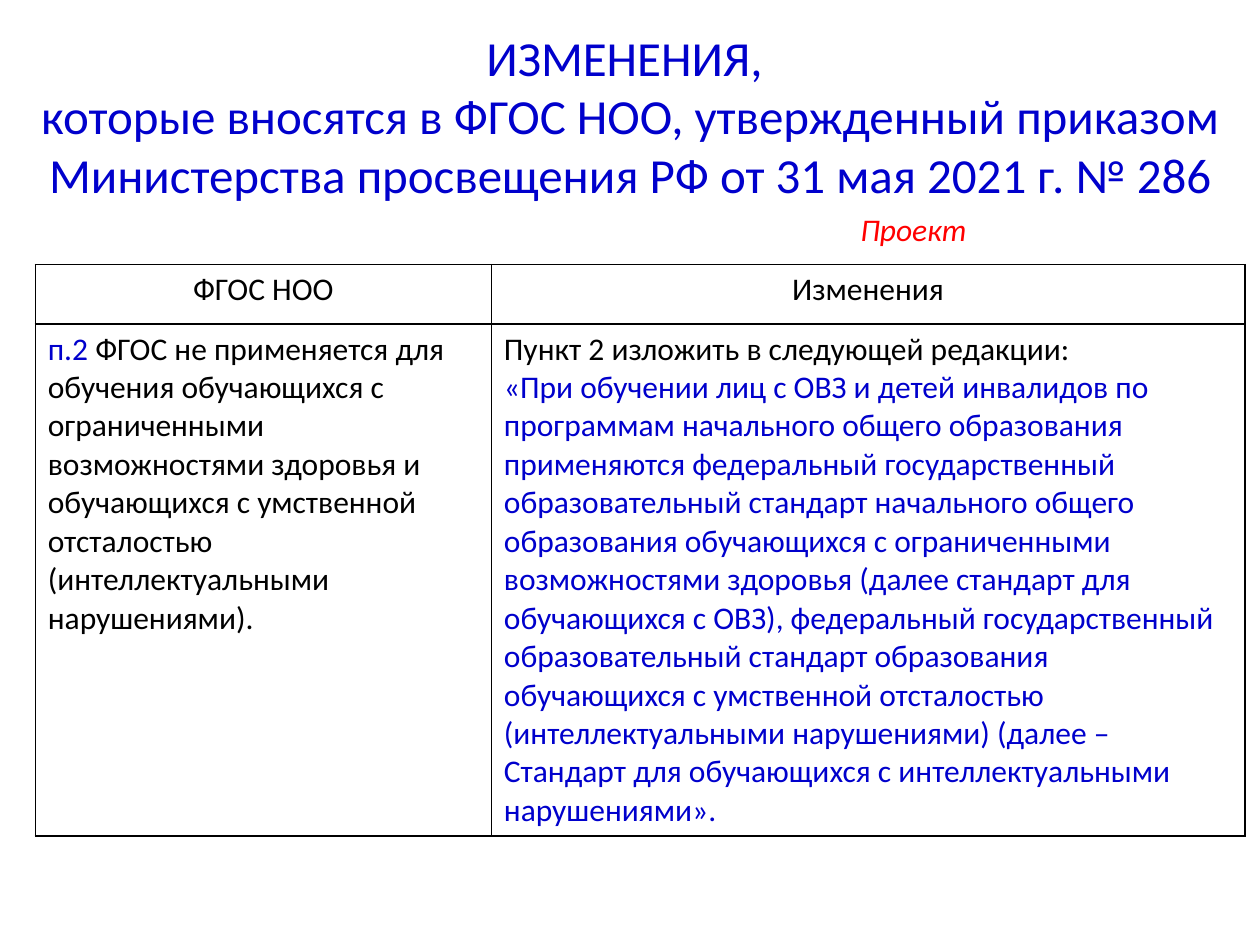
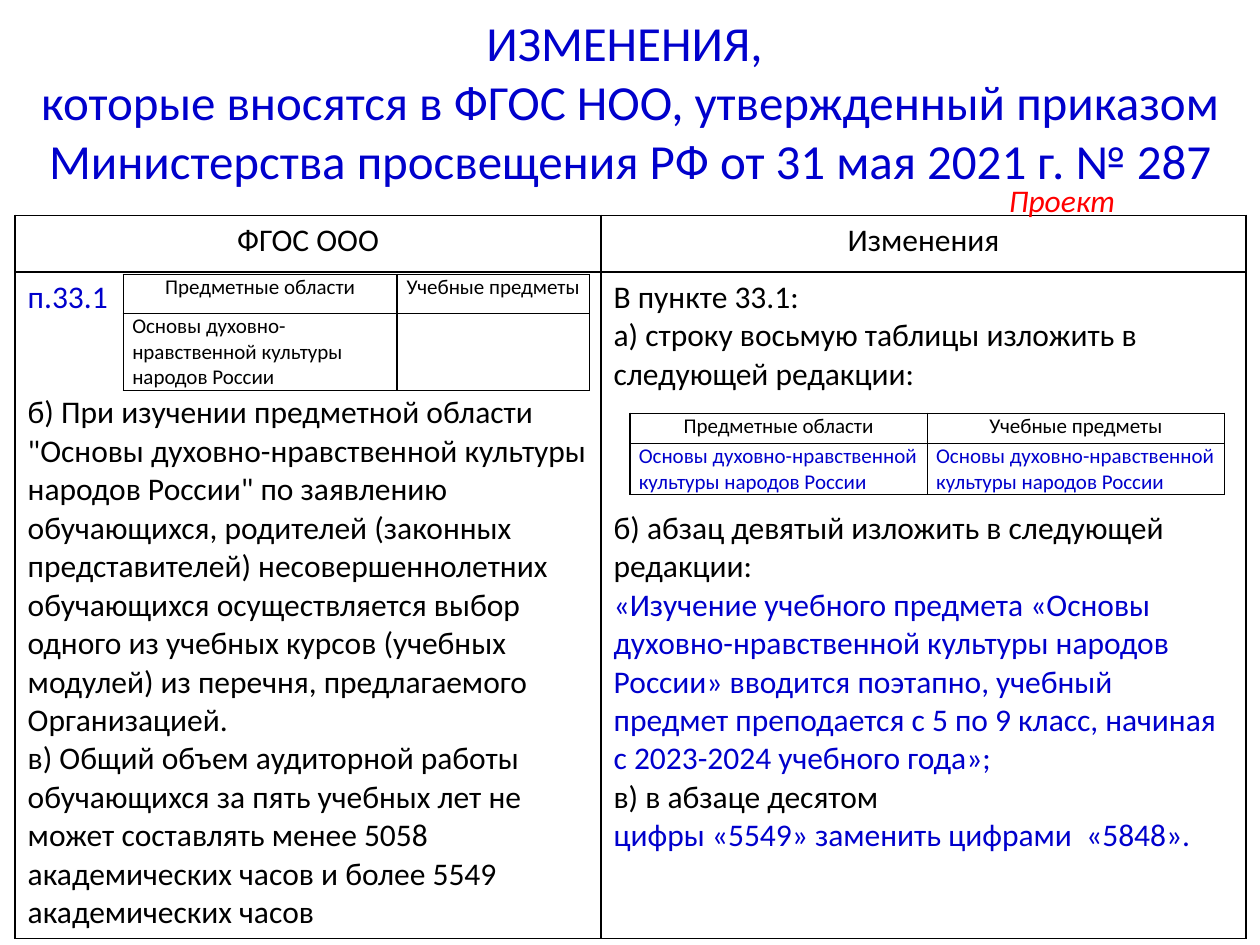
from lxml import etree
from pptx import Presentation
from pptx.dml.color import RGBColor
from pptx.enum.text import MSO_ANCHOR, MSO_AUTO_SIZE, PP_ALIGN
from pptx.oxml.ns import qn
from pptx.util import Inches, Pt

CENTER, LEFT = PP_ALIGN.CENTER, PP_ALIGN.LEFT
MIDDLE = MSO_ANCHOR.MIDDLE
FIXED, GROW = MSO_AUTO_SIZE.NONE, MSO_AUTO_SIZE.SHAPE_TO_FIT_TEXT
COLORS = {"ink": "000000", "blue": "0000CC", "red": "FF0000"}
FONT = "Calibri"
COLS, ROWS = 100, 75
LINE = 22
TITLE = ("ИЗМЕНЕНИЯ, \vкоторые вносятся в ФГОС НОО, утвержденный приказом "
         "Министерства просвещения РФ от 31 мая 2021 г. № {}")
AREAS = ["Предметные области", "Учебные предметы"]
TOPIC = "Основы духовно-нравственной культуры народов России"


class Deck:
    """Holds the style and the current slide, measured on a fine grid."""

    def __init__(self):
        self.show = Presentation()
        self.show.slide_width, self.show.slide_height = Inches(10), Inches(7.5)
        self.slide = None

    def wide(self, cols):
        return round(self.show.slide_width * cols / COLS)

    def high(self, rows):
        return round(self.show.slide_height * rows / ROWS)

    def box(self, left, top, width, height):
        return self.wide(left), self.high(top), self.wide(width), self.high(height)

    def style(self, font, size, color, italic=False):
        font.name, font.size, font.italic = FONT, Pt(size), italic
        font.color.rgb = RGBColor.from_string(COLORS[color])

    def text(self, para, runs, size, align=LEFT, italic=False, gap=0):
        para.alignment = align
        para.space_before = Pt(gap * LINE)
        self.style(para.font, size, runs[0][1], italic)
        for words, color in runs:
            para.add_run().text = words
            self.style(para.runs[-1].font, size, color, italic)

    def page(self, order, height):
        self.slide = self.show.slides.add_slide(self.show.slide_layouts[5])
        title = self.slide.shapes.title
        title.left, title.top, title.width, title.height = self.box(0, 1.3, COLS, height)
        frame = title.text_frame
        frame.text = TITLE.format(order)
        frame.word_wrap, frame.auto_size = True, FIXED
        frame.vertical_anchor = MIDDLE
        para = frame.paragraphs[0]
        para.alignment = CENTER
        self.style(para.font, 28, "blue")
        for run in para.runs:
            self.style(run.font, 28, "blue")

    def label(self, left, top, width):
        frame = self.slide.shapes.add_textbox(*self.box(left, top, width, 4)).text_frame
        frame.word_wrap, frame.auto_size = True, GROW
        self.text(frame.paragraphs[0], [("Проект", "red")], 18, italic=True)

    def border(self, cell):
        props = cell._tc.get_or_add_tcPr()
        for side in ("lnL", "lnR", "lnT", "lnB"):
            line = etree.SubElement(props, qn("a:" + side), w=str(Pt(1)))
            fill = etree.SubElement(line, qn("a:solidFill"))
            etree.SubElement(fill, qn("a:srgbClr"), val=COLORS["ink"])
        cell.fill.background()

    def table(self, left, top, cols, rows, heads, body, size=18, inset=None):
        """Draw a header row and one body row; a body cell lists (runs, gap) pairs."""
        area = self.box(left, top, sum(cols), sum(rows))
        grid = self.slide.shapes.add_table(len(rows), len(cols), *area).table
        grid.first_row = grid.horz_banding = False
        for col, width in zip(grid.columns, cols):
            col.width = self.wide(width)
        for row, height in zip(grid.rows, rows):
            row.height = self.high(height)
        head = [[part(words)] for words in heads]
        for r, line in enumerate((head, body)):
            for c, parts in enumerate(line):
                cell = grid.cell(r, c)
                self.border(cell)
                if inset is not None:
                    cell.margin_left = cell.margin_right = self.wide(inset)
                    cell.margin_top = cell.margin_bottom = 0
                frame = cell.text_frame
                for n, (runs, gap) in enumerate(parts):
                    para = frame.add_paragraph() if n else frame.paragraphs[0]
                    self.text(para, runs, size, LEFT if r else CENTER, gap=gap)


def part(words, color="ink", gap=0):
    return [(words, color)], gap


def first(deck):
    deck.page(286, 15.7)
    old = [([("п.2", "blue"),
             (" ФГОС не применяется для обучения обучающихся с ограниченными "
              "возможностями здоровья и обучающихся с умственной отсталостью "
              "(интеллектуальными нарушениями).", "ink")], 0)]
    new = [part("Пункт 2 изложить в следующей редакции:"),
           part("«При обучении лиц с ОВЗ и детей инвалидов по программам начального "
                "общего образования применяются федеральный государственный "
                "образовательный стандарт начального общего образования обучающихся "
                "с ограниченными возможностями здоровья (далее стандарт для "
                "обучающихся с ОВЗ), федеральный государственный образовательный "
                "стандарт образования обучающихся с умственной отсталостью "
                "(интеллектуальными нарушениями) (далее – Стандарт для обучающихся "
                "с интеллектуальными нарушениями».", "blue")]
    deck.table(2.8, 21, [36.2, 59.8], [4.7, 40], ["ФГОС НОО", "Изменения"], [old, new])
    deck.label(67.3, 16.2, 30.7)


def second(deck):
    deck.page(287, 13.4)
    old = [part("п.33.1", "blue"),
           part("б) При изучении предметной области \"Основы духовно-нравственной "
                "культуры народов России\" по заявлению обучающихся, родителей "
                "(законных представителей) несовершеннолетних обучающихся "
                "осуществляется выбор одного из учебных курсов (учебных модулей) "
                "из перечня, предлагаемого Организацией.", gap=2),
           part("в) Общий объем аудиторной работы обучающихся за пять учебных лет "
                "не может составлять менее 5058 академических часов и более 5549 "
                "академических часов")]
    new = [part("В пункте 33.1:"),
           part("а) строку восьмую таблицы изложить в следующей редакции:"),
           part("б) абзац девятый изложить в следующей редакции:", gap=3),
           part("«Изучение учебного предмета «Основы духовно-нравственной культуры "
                "народов России» вводится поэтапно, учебный предмет преподается "
                "с 5 по 9 класс, начиная с 2023-2024 учебного года»;", "blue"),
           part("в) в абзаце десятом"),
           part("цифры «5549» заменить цифрами  «5848».", "blue")]
    deck.table(1.2, 17.1, [46.5, 51.2], [4.5, 52.1], ["ФГОС ООО", "Изменения"], [old, new])
    topic = [part(TOPIC, "blue")]
    deck.table(50, 32.8, [23.6, 23.6], [2.4, 3.9], AREAS, [topic, topic], 12, 0.7)
    deck.table(9.8, 21.8, [21.7, 15.3], [3.1, 6], AREAS, [[part(TOPIC)], []], 12, 0.7)
    deck.label(79.1, 13.9, 20)


def main():
    deck = Deck()
    first(deck)
    second(deck)
    deck.show.save("out.pptx")


if __name__ == "__main__":
    main()
